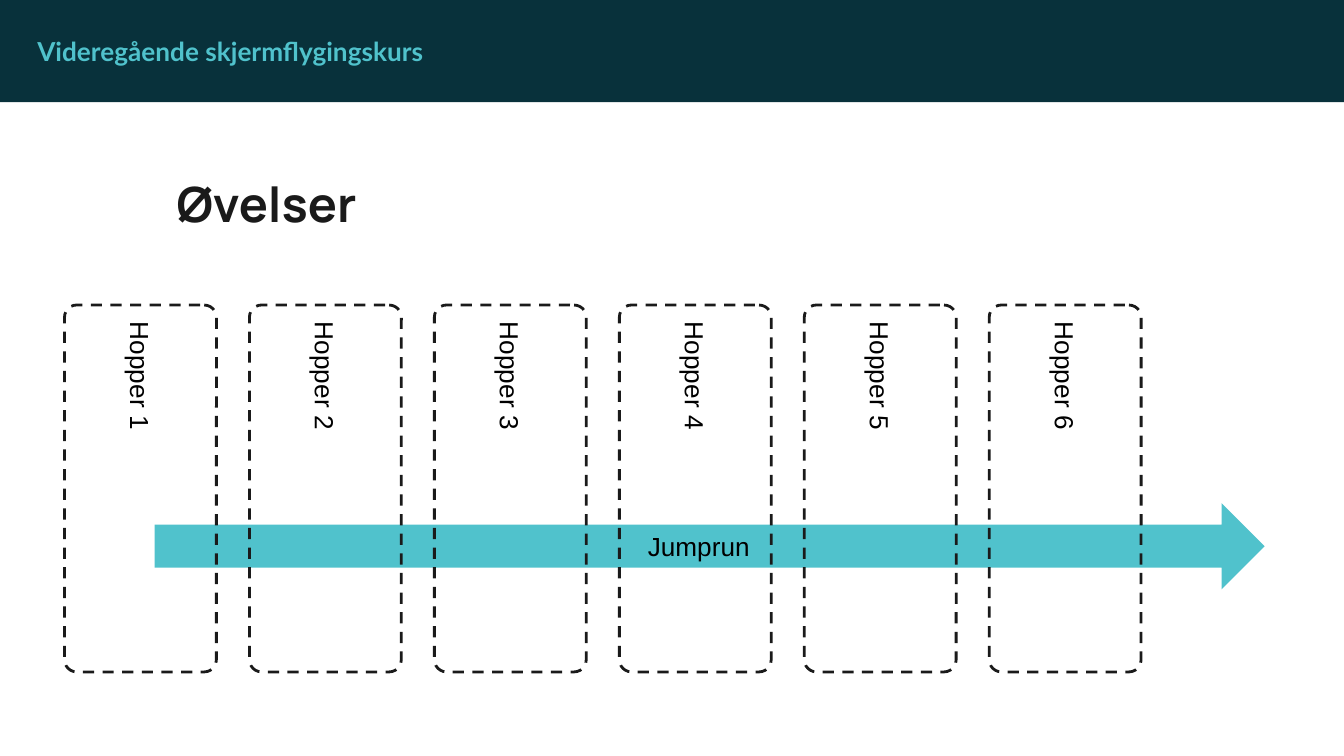
from pptx import Presentation
from pptx.dml.color import RGBColor
from pptx.enum.dml import MSO_LINE_DASH_STYLE as Dash
from pptx.enum.shapes import MSO_SHAPE as Preset
from pptx.enum.text import MSO_ANCHOR as Anchor, PP_ALIGN as Align
from pptx.util import Inches, Pt

CELL = Inches(0.1)
COLUMNS, ROWS = 100, 56.25
DARK, TEAL, INK, BLACK = "08313B", "50C2CC", "1A1A1A", "000000"
JUMPERS = 6


def color(value):
    return RGBColor.from_string(value)


def cells(*lengths):
    return [round(length * CELL) for length in lengths]


def write(shape, text, font, size, ink, bold=False, align=Align.LEFT, anchor=Anchor.TOP):
    frame = shape.text_frame
    frame.word_wrap = True
    frame.vertical_anchor = anchor
    frame.margin_left = frame.margin_right = CELL
    frame.margin_top = frame.margin_bottom = CELL
    para = frame.paragraphs[0]
    para.text = text
    para.alignment = align
    para.font.name = font
    para.font.size = Pt(size)
    para.font.bold = bold
    para.font.color.rgb = color(ink)


def add_shape(page, preset, box, fill=None):
    shape = page.shapes.add_shape(preset, *cells(*box))
    shape.shadow.inherit = False
    shape.line.fill.background()
    if fill:
        shape.fill.solid()
        shape.fill.fore_color.rgb = color(fill)
    else:
        shape.fill.background()
    return shape


def add_header(page, box):
    left, top, width, height = box
    add_shape(page, Preset.RECTANGLE, box, DARK)
    label_box = left + 1.8, top + 1.65, width * 0.33, height - 3.2
    label = page.shapes.add_textbox(*cells(*label_box))
    write(label, "Videregående skjermflygingskurs", "Lato", 14, TEAL, bold=True)


def add_title(page, box):
    title = page.shapes.add_textbox(*cells(*box))
    write(title, "Øvelser", "Manrope", 26, INK, bold=True)


def add_jumprun(page, box):
    arrow = add_shape(page, Preset.RIGHT_ARROW, box, TEAL)
    write(arrow, "Jumprun", "Arial", 14, BLACK, align=Align.CENTER, anchor=Anchor.MIDDLE)


def add_jumper(page, box, text):
    left, top, width, height = box
    shift = (height - width) / 2
    turned_box = left - shift, top + shift, height, width
    jumper = add_shape(page, Preset.ROUNDED_RECTANGLE, turned_box)
    jumper.rotation = 90
    jumper.adjustments[0] = 0.08
    jumper.line.color.rgb = color(INK)
    jumper.line.width = Pt(1.5)
    jumper.line.dash_style = Dash.DASH
    write(jumper, text, "Arial", 14, BLACK, anchor=Anchor.MIDDLE)


def add_jumpers(page, box):
    left, top, width, height = box
    jumper_width = 11.3
    pitch = (width - jumper_width) / (JUMPERS - 1)
    for index in range(JUMPERS):
        jumper_box = left + index * pitch, top, jumper_width, height
        add_jumper(page, jumper_box, f"Hopper {index + 1}")


def main():
    deck = Presentation()
    deck.slide_width, deck.slide_height = cells(COLUMNS, ROWS)
    page = deck.slides.add_slide(deck.slide_layouts[6])
    add_header(page, (0, 0, COLUMNS, 7.6))
    add_title(page, (12.15, 11.95, 84.1, 5.9))
    add_jumprun(page, (11.5, 37.45, 82.6, 6.4))
    add_jumpers(page, (4.8, 22.7, 80.1, 27.3))
    deck.save("out.pptx")


if __name__ == "__main__":
    main()
